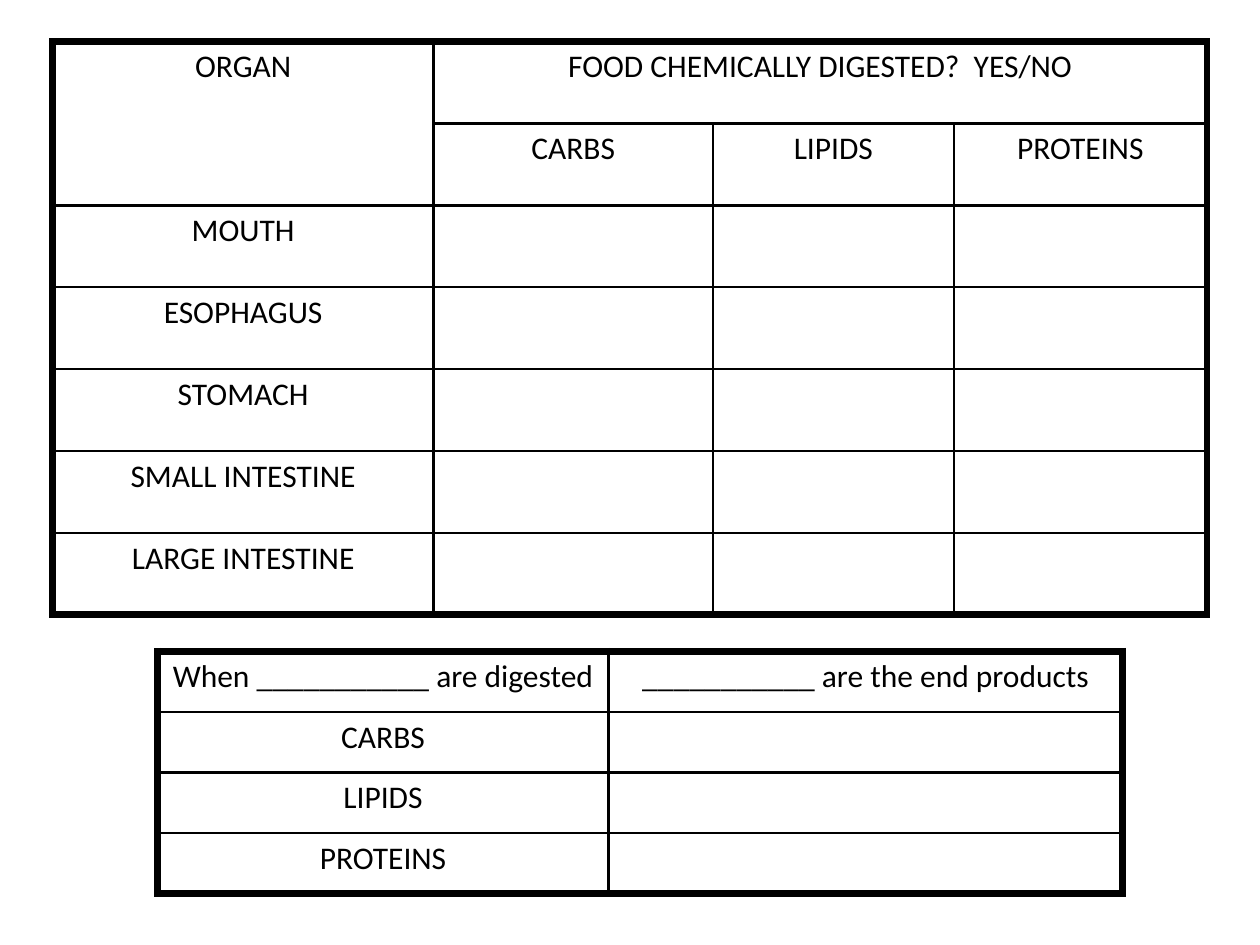
from dataclasses import dataclass

from lxml import etree
from pptx import Presentation
from pptx.dml.color import RGBColor
from pptx.enum.text import PP_ALIGN
from pptx.oxml.ns import qn
from pptx.util import Emu, Pt

CENTER = PP_ALIGN.CENTER
EMU_PER_PX = 9144
BLANK_LAYOUT = 6
FONT = "Calibri"
TEXT_SIZE = Pt(18)
INNER_LINE = Pt(1.5)
OUTER_LINE = Pt(4.5)
COLORS = {"ink": "000000"}


@dataclass(frozen=True)
class Worksheet:
    left: int
    top: int
    columns: tuple[int, ...]
    row_height: int
    rows: tuple[tuple[str, ...], ...]
    merges: tuple[tuple[int, int, int, int], ...] = ()


ORGANS = ("MOUTH", "ESOPHAGUS", "STOMACH", "SMALL INTESTINE", "LARGE INTESTINE")
NUTRIENTS = ("CARBS", "LIPIDS", "PROTEINS")

WORKSHEETS = (
    Worksheet(
        42, 33, (302, 222, 191, 201), 65,
        (
            ("ORGAN", "FOOD CHEMICALLY DIGESTED?  YES/NO"),
            ("", *NUTRIENTS),
            *((organ,) for organ in ORGANS),
        ),
        ((0, 0, 1, 0), (0, 1, 0, 3)),
    ),
    Worksheet(
        125, 517, (358, 408), 48,
        (
            ("When ___________ are digested", "___________ are the end products"),
            *((nutrient,) for nutrient in NUTRIENTS),
        ),
    ),
)


def px(length: int) -> Emu:
    return Emu(length * EMU_PER_PX)


def add_border(cell, side: str, outer: bool) -> None:
    properties = cell._tc.get_or_add_tcPr()
    line = etree.SubElement(properties, qn(f"a:ln{side}"))
    line.set("w", str(OUTER_LINE if outer else INNER_LINE))
    fill = etree.SubElement(line, qn("a:solidFill"))
    etree.SubElement(fill, qn("a:srgbClr")).set("val", COLORS["ink"])


def format_cell(cell, text: str) -> None:
    cell.fill.background()
    cell.text = text
    paragraph = cell.text_frame.paragraphs[0]
    paragraph.alignment = CENTER
    paragraph.font.name = FONT
    paragraph.font.size = TEXT_SIZE
    paragraph.font.color.rgb = RGBColor.from_string(COLORS["ink"])


def draw_worksheet(page, sheet: Worksheet) -> None:
    row_count, column_count = len(sheet.rows), len(sheet.columns)
    table = page.shapes.add_table(
        row_count, column_count, px(sheet.left), px(sheet.top),
        px(sum(sheet.columns)), px(sheet.row_height * row_count),
    ).table
    table.first_row = False
    table.horz_banding = False
    for column, width in zip(table.columns, sheet.columns):
        column.width = px(width)
    for row in table.rows:
        row.height = px(sheet.row_height)
    for top, left, bottom, right in sheet.merges:
        table.cell(top, left).merge(table.cell(bottom, right))

    for row_index, texts in enumerate(sheet.rows):
        for column_index in range(column_count):
            cell = table.cell(row_index, column_index)
            add_border(cell, "L", column_index == 0)
            add_border(cell, "R", column_index + cell.span_width == column_count)
            add_border(cell, "T", row_index == 0)
            add_border(cell, "B", row_index + cell.span_height == row_count)
            format_cell(cell, texts[column_index] if column_index < len(texts) else "")


def main() -> None:
    deck = Presentation()
    deck.slide_width, deck.slide_height = px(1000), px(750)
    page = deck.slides.add_slide(deck.slide_layouts[BLANK_LAYOUT])
    for sheet in WORKSHEETS:
        draw_worksheet(page, sheet)
    deck.save("out.pptx")


if __name__ == "__main__":
    main()
